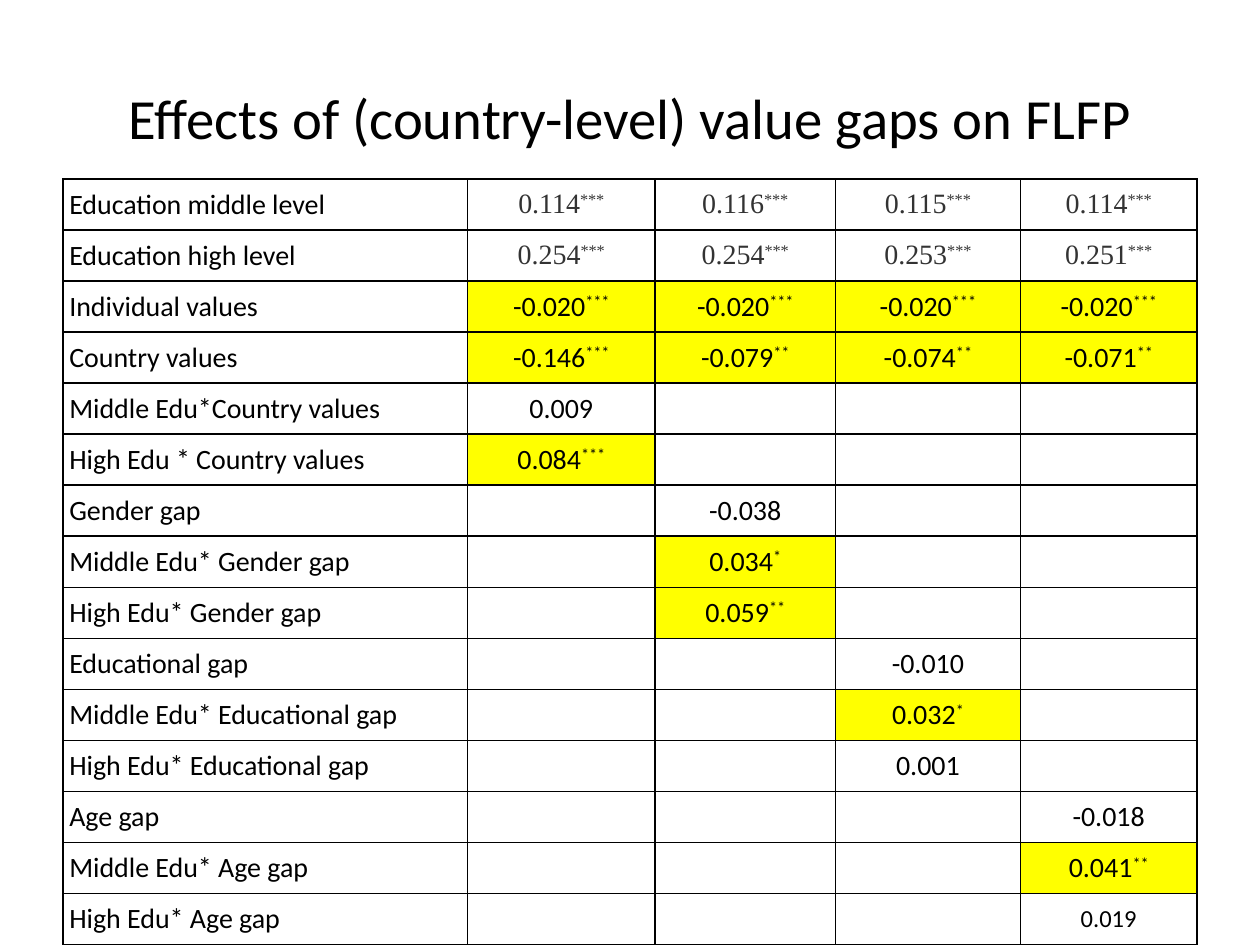
from lxml.etree import SubElement
from pptx import Presentation
from pptx.dml.color import RGBColor
from pptx.enum.text import MSO_ANCHOR, PP_ALIGN
from pptx.oxml.ns import qn
from pptx.util import Inches, Pt

COLORS = {"ink": "000000", "gray": "333333", "mark": "FFFF00"}
SANS, SERIF = "Calibri", "Times New Roman"
TITLE = "Effects of (country-level) value gaps on FLFP"
COLS = [3.21, 1.49, 1.43, 1.47, 1.4]
ROWS = [
    ("Education middle level", "0.114***", "0.116***", "0.115***", "0.114***"),
    ("Education high level", "0.254***", "0.254***", "0.253***", "0.251***"),
    ("Individual values", "-0.020***", "-0.020***", "-0.020***", "-0.020***"),
    ("Country values", "-0.146***", "-0.079**", "-0.074**", "-0.071**"),
    ("Middle Edu*Country values", "0.009", "", "", ""),
    ("High Edu * Country values", "0.084***", "", "", ""),
    ("Gender gap", "", "-0.038", "", ""),
    ("Middle Edu* Gender gap", "", "0.034*", "", ""),
    ("High Edu* Gender gap", "", "0.059**", "", ""),
    ("Educational gap", "", "", "-0.010", ""),
    ("Middle Edu* Educational gap", "", "", "0.032*", ""),
    ("High Edu* Educational gap", "", "", "0.001", ""),
    ("Age gap", "", "", "", "-0.018"),
    ("Middle Edu* Age gap", "", "", "", "0.041**"),
    ("High Edu* Age gap", "", "", "", "0.019"),
]
SERIF_ROWS = 2


def apply(target, values):
    for name, value in values.items():
        setattr(target, name, value)


def add_run(para, text, size, font=SANS, color="ink", raised=False):
    run = para.add_run()
    run.text = text
    apply(run.font, {"size": Pt(size), "name": font})
    run.font.color.rgb = RGBColor.from_string(COLORS[color])
    if raised:
        run.font._element.set("baseline", "30000")


def add_title(slide, left, top, width, height):
    box = slide.shapes.add_textbox(left, top, width, height)
    frame = box.text_frame
    apply(frame, {"word_wrap": True, "vertical_anchor": MSO_ANCHOR.MIDDLE})
    para = frame.paragraphs[0]
    para.alignment = PP_ALIGN.CENTER
    add_run(para, TITLE, 32.4)


def add_border(cell):
    props = cell._tc.get_or_add_tcPr()
    for side in ("lnL", "lnR", "lnT", "lnB"):
        line = SubElement(props, qn(f"a:{side}"), w=str(Pt(1)))
        fill = SubElement(line, qn("a:solidFill"))
        SubElement(fill, qn("a:srgbClr"), val=COLORS["ink"])


def format_cell(cell, marked):
    apply(cell, {
        "margin_left": 0, "margin_right": 0,
        "margin_top": 0, "margin_bottom": 0,
        "vertical_anchor": MSO_ANCHOR.MIDDLE,
    })
    add_border(cell)
    if marked:
        cell.fill.solid()
        cell.fill.fore_color.rgb = RGBColor.from_string(COLORS["mark"])
    else:
        cell.fill.background()


def fill_value(cell, text, row):
    para = cell.text_frame.paragraphs[0]
    para.alignment = PP_ALIGN.CENTER
    number = text.rstrip("*")
    stars = text[len(number):]
    size = 14 if row == len(ROWS) - 1 else 16
    style = (SERIF, "gray") if row < SERIF_ROWS else (SANS, "ink")
    if number:
        add_run(para, number, size, *style)
    if stars:
        add_run(para, stars, size, *style, raised=True)


def add_grid(slide, left, top, width, height):
    shape = slide.shapes.add_table(
        len(ROWS), len(COLS), left, top, width, height)
    table = shape.table
    apply(table, {"first_row": False, "horz_banding": False})
    for column, share in zip(table.columns, COLS):
        column.width = int(width * share / sum(COLS))
    for row, texts in enumerate(ROWS):
        for col, text in enumerate(texts):
            cell = table.cell(row, col)
            marked = col > 0 and row >= SERIF_ROWS and "*" in text
            format_cell(cell, marked)
            if col == 0:
                add_run(cell.text_frame.paragraphs[0], f" {text}", 16)
            else:
                fill_value(cell, text, row)


def main():
    deck = Presentation()
    apply(deck, {"slide_width": Inches(10), "slide_height": Inches(7.5)})
    slide = deck.slides.add_slide(deck.slide_layouts[6])
    add_title(slide, Inches(0.5), Inches(0.3), Inches(9), Inches(1.25))
    add_grid(slide, Inches(0.5), Inches(1.42), Inches(9), Inches(6.08))
    deck.save("out.pptx")


if __name__ == "__main__":
    main()
